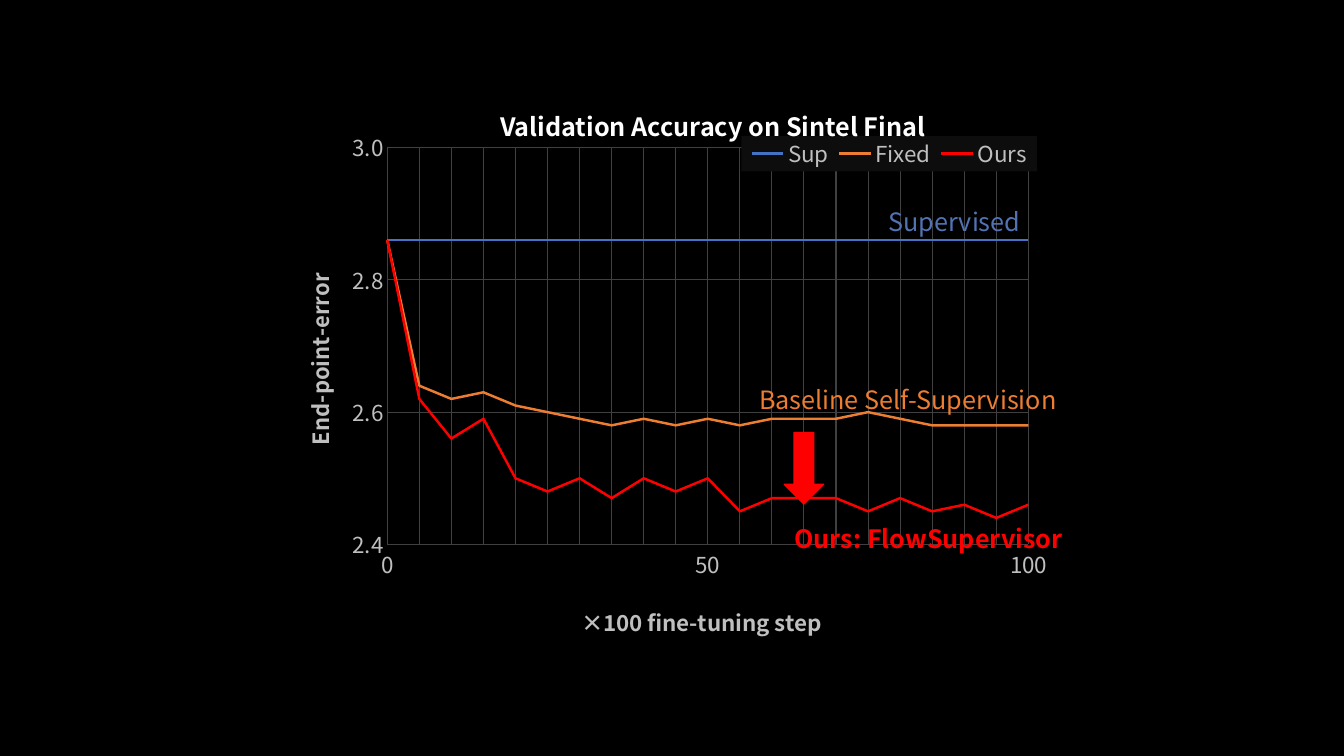
from lxml import etree
from pptx import Presentation
from pptx.chart.data import CategoryChartData as ChartData
from pptx.dml.color import RGBColor as RGB
from pptx.enum.chart import XL_CHART_TYPE as KIND
from pptx.enum.chart import XL_LEGEND_POSITION as SIDE
from pptx.enum.chart import XL_TICK_MARK as TICK
from pptx.enum.shapes import MSO_SHAPE as SHAPE
from pptx.enum.text import MSO_AUTO_SIZE as FIT
from pptx.enum.text import PP_ALIGN as ALIGN
from pptx.oxml.ns import qn
from pptx.util import Pt

FACE = "Noto Sans CJK KR"
HUE = {
    "back": "000000", "white": "FFFFFF", "label": "BFBFBF", "grid": "404040",
    "key": "0D0D0D", "sup": "4472C4", "note": "5372B4", "fixed": "ED7D31",
    "ours": "FF0000",
}
STEPS = [str(n) if n % 50 == 0 else "" for n in range(0, 101, 5)]
RUNS = [
    ("Sup", "sup", [2.86] * len(STEPS)),
    ("Fixed", "fixed", [2.86, 2.64, 2.62, 2.63, 2.61, 2.6, 2.59, 2.58, 2.59,
                        2.58, 2.59, 2.58, 2.59, 2.59, 2.59, 2.6, 2.59, 2.58,
                        2.58, 2.58, 2.58]),
    ("Ours", "ours", [2.86, 2.62, 2.56, 2.59, 2.5, 2.48, 2.5, 2.47, 2.5,
                      2.48, 2.5, 2.45, 2.47, 2.47, 2.47, 2.45, 2.47, 2.45,
                      2.46, 2.44, 2.46]),
]


def tint(fill, hue):
    fill.solid()
    fill.fore_color.rgb = RGB.from_string(HUE[hue])


def stroke(line, hue, width):
    tint(line.fill, hue)
    line.width = Pt(width)


def style(font, size, hue, bold=False):
    font.name, font.size, font.bold = FACE, Pt(size), bold
    font.color.rgb = RGB.from_string(HUE[hue])


def make(tag, val=None):
    node = etree.Element(qn(tag))
    if val is not None:
        node.set("val", str(val))
    return node


def place(node, index, x, y, w=None, h=None, inner=False):
    """Give a chart part a manual layout, in fractions of the chart."""
    for old in node.findall(qn("c:layout")):
        node.remove(old)
    layout = make("c:layout")
    manual = make("c:manualLayout")
    layout.append(manual)
    if inner:
        manual.append(make("c:layoutTarget", "inner"))
    manual.append(make("c:xMode", "edge"))
    manual.append(make("c:yMode", "edge"))
    for tag, val in (("c:x", x), ("c:y", y), ("c:w", w), ("c:h", h)):
        if val is not None:
            manual.append(make(tag, val))
    node.insert(index, layout)


def dress(axis, title, x, y):
    """Style an axis and put its title at x, y."""
    axis.has_major_gridlines = True
    stroke(axis.major_gridlines.format.line, "grid", 0.75)
    axis.major_tick_mark = axis.minor_tick_mark = TICK.NONE
    axis.format.line.fill.background()
    style(axis.tick_labels.font, 16, "label")
    frame = axis.axis_title.text_frame
    frame.text = title
    style(frame.paragraphs[0].font, 16, "label", True)
    place(axis.axis_title._element, 1, x, y)


def add_legend(chart):
    chart.has_legend = True
    legend = chart.legend
    legend.position = SIDE.TOP
    legend.include_in_layout = False
    style(legend.font, 16, "label")
    node = legend._element
    place(node, 1, 0.59, 0.01, 0.38, 0.07)
    panel = make("c:spPr")
    fill = make("a:solidFill")
    fill.append(make("a:srgbClr", HUE["key"]))
    panel.append(fill)
    node.find(qn("c:overlay")).addnext(panel)


def add_plot(slide, x, y, w, h):
    data = ChartData(number_format="0.00")
    data.categories = STEPS
    for name, _, vals in RUNS:
        data.add_series(name, vals)
    chart = slide.shapes.add_chart(
        KIND.LINE, Pt(x), Pt(y), Pt(w), Pt(h), data).chart
    chart.has_title = False
    style(chart.font, 16, "white")
    chart.plots[0].vary_by_categories = False
    for line, (_, hue, _) in zip(chart.plots[0].series, RUNS):
        line.smooth = False
        stroke(line.format.line, hue, 1.75)

    steps, error = chart.category_axis, chart.value_axis
    dress(steps, "×100 fine-tuning step", 0.38, 0.93)
    dress(error, "End-point-error", 0.02, 0.28)
    error.minimum_scale, error.maximum_scale = 2.4, 3
    error.major_unit = 0.2
    error.tick_labels.number_format = "0.0"
    error.tick_labels.number_format_is_linked = False

    # Start the lines on the axis and label every step.
    node = error._element
    for old in node.findall(qn("c:crossBetween")):
        node.remove(old)
    node.find(qn("c:crosses")).addnext(make("c:crossBetween", "midCat"))
    last = steps._element.find(qn("c:noMultiLvlLbl"))
    for tag in ("c:tickLblSkip", "c:tickMarkSkip"):
        last.addprevious(make(tag, 1))

    area = chart._chartSpace.chart.plotArea
    place(area, 0, 0.135, 0.033, 0.824, 0.787, inner=True)
    add_legend(chart)


def add_note(slide, text, x, y, w, hue, bold=False, align=ALIGN.RIGHT):
    frame = slide.shapes.add_textbox(Pt(x), Pt(y), Pt(w), Pt(29)).text_frame
    frame.word_wrap = True
    frame.auto_size = FIT.SHAPE_TO_FIT_TEXT
    para = frame.paragraphs[0]
    para.text, para.alignment = text, align
    style(para.font, 18, hue, bold)


def add_arrow(slide, x, y, w, h, hue):
    arrow = slide.shapes.add_shape(
        SHAPE.DOWN_ARROW, Pt(x), Pt(y), Pt(w), Pt(h))
    arrow.shadow.inherit = False
    tint(arrow.fill, hue)
    stroke(arrow.line, hue, 1)


def main():
    deck = Presentation()
    deck.slide_width, deck.slide_height = Pt(960), Pt(540)
    slide = deck.slides.add_slide(deck.slide_layouts[6])
    tint(slide.background.fill, "back")
    add_plot(slide, 201.6, 93.6, 555.8, 366.5)
    add_note(slide, "Supervised", 614.2, 144, 121.7, "note")
    add_note(slide, "Ours: FlowSupervisor", 506.9, 370.1, 259.2, "ours", True)
    add_note(slide, "Validation Accuracy on Sintel Final", 344.2, 76.3, 329.8,
             "white", True, ALIGN.CENTER)
    add_note(slide, "Baseline Self-Supervision", 502.6, 270.7, 259.2, "fixed")
    add_arrow(slide, 560.2, 308.9, 28.1, 51.1, "ours")
    deck.save("out.pptx")


if __name__ == "__main__":
    main()
